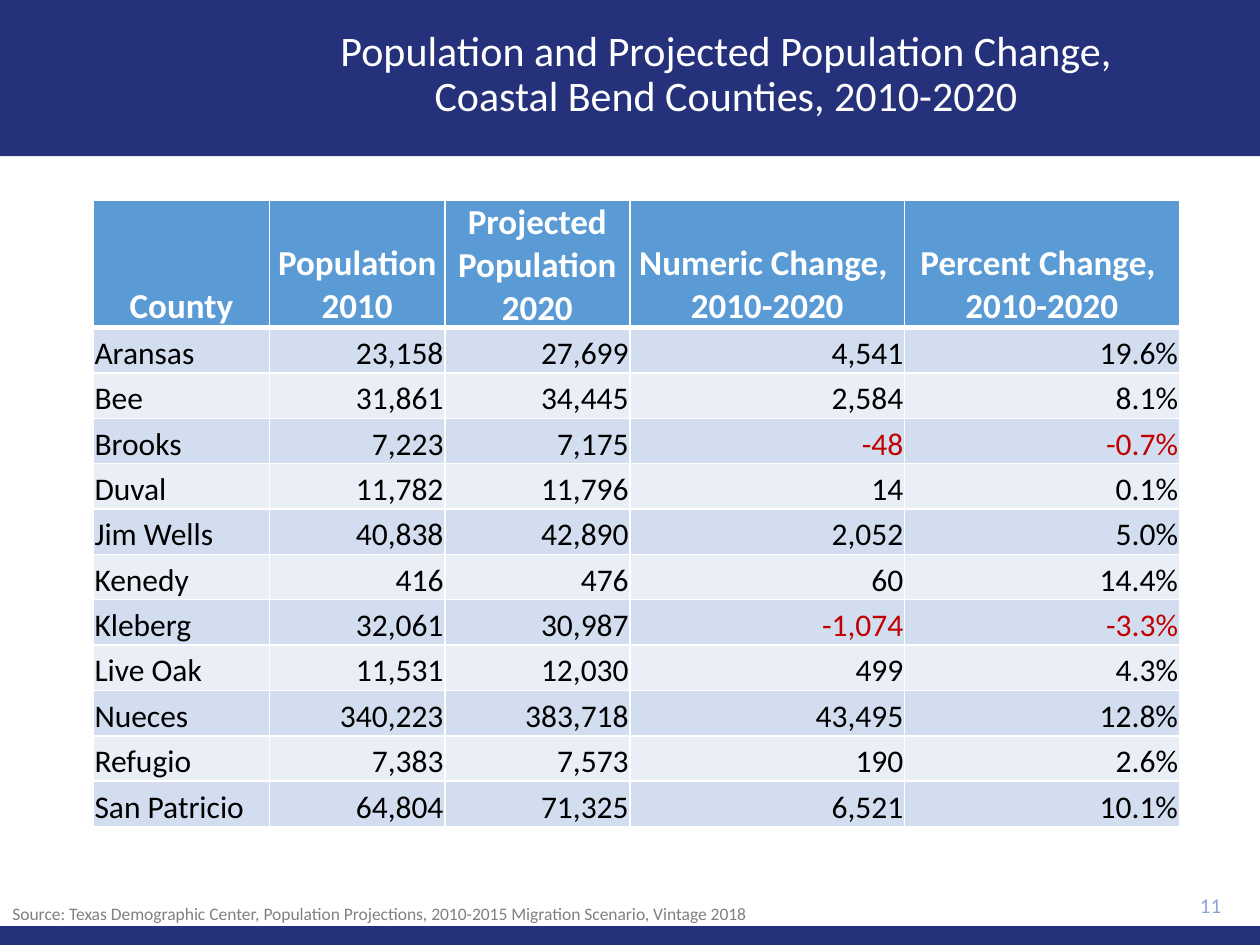
from lxml import etree
from pptx import Presentation
from pptx import util as u
from pptx.dml.color import RGBColor
from pptx.enum import shapes, text
from pptx.oxml.ns import qn

WIDTH, HEIGHT = 10, 7.5
NAVY, WHITE, BLACK, RED = "25327B", "FFFFFF", "000000", "C00000"
HEADER_FILL, BANDS = "5B9BD5", ("D2DEEF", "EAEFF7")
LEFT, CENTER, RIGHT = text.PP_ALIGN.LEFT, text.PP_ALIGN.CENTER, text.PP_ALIGN.RIGHT
MIDDLE, BOTTOM = text.MSO_ANCHOR.MIDDLE, text.MSO_ANCHOR.BOTTOM

TITLE = "Population and Projected Population Change, \vCoastal Bend Counties, 2010-2020 "
SOURCE = ("Source: Texas Demographic Center, Population Projections, "
          "2010-2015 Migration Scenario, Vintage 2018")
PAGE = "11"
HEADERS = ["County", "Population 2010", "Projected Population 2020",
           "Numeric Change, \n2010-2020", "Percent Change, \n2010-2020"]
COUNTIES = [
    ("Aransas", "23,158", "27,699", "4,541", "19.6%"),
    ("Bee", "31,861", "34,445", "2,584", "8.1%"),
    ("Brooks", "7,223", "7,175", "-48", "-0.7%"),
    ("Duval", "11,782", "11,796", "14", "0.1%"),
    ("Jim Wells", "40,838", "42,890", "2,052", "5.0%"),
    ("Kenedy", "416", "476", "60", "14.4%"),
    ("Kleberg", "32,061", "30,987", "-1,074", "-3.3%"),
    ("Live Oak", "11,531", "12,030", "499", "4.3%"),
    ("Nueces", "340,223", "383,718", "43,495", "12.8%"),
    ("Refugio", "7,383", "7,573", "190", "2.6%"),
    ("San Patricio", "64,804", "71,325", "6,521", "10.1%"),
]
COLUMN_WIDTHS = [1.4, 1.39, 1.47, 2.18, 2.18]
HEADER_HEIGHT, ROW_HEIGHT = 0.8, 0.36


def rgb(color):
    return RGBColor.from_string(color)


def inches(*lengths):
    return [u.Inches(length) for length in lengths]


def write(frame, words, size, color, align=LEFT, bold=False, spacing=None):
    frame.text = words
    for paragraph in frame.paragraphs:
        paragraph.alignment = align
        if spacing:
            paragraph.line_spacing = spacing
        for run in paragraph.runs:
            run.font.name, run.font.size, run.font.bold = "Calibri", u.Pt(size), bold
            run.font.color.rgb = rgb(color)


def add_band(slide, top, height):
    band = slide.shapes.add_shape(shapes.MSO_SHAPE.RECTANGLE, *inches(0, top, WIDTH, height))
    band.shadow.inherit = False
    band.fill.solid()
    band.fill.fore_color.rgb = rgb(NAVY)
    band.line.fill.background()


def add_text(slide, place, words, wrap=True, anchor=text.MSO_ANCHOR.TOP, **style):
    frame = slide.shapes.add_textbox(*inches(*place)).text_frame
    frame.word_wrap, frame.vertical_anchor = wrap, anchor
    write(frame, words, **style)


def set_border(cell, side, points):
    properties = cell._tc.get_or_add_tcPr()
    line = etree.SubElement(properties, qn(f"a:ln{side}"), w=str(u.Pt(points)))
    fill = etree.SubElement(line, qn("a:solidFill"))
    etree.SubElement(fill, qn("a:srgbClr"), val=WHITE)


def fill_cell(cell, words, fill, borders, **style):
    """borders gives the line width in points for each side."""
    for side, points in borders.items():
        set_border(cell, side, points)
    cell.fill.solid()
    cell.fill.fore_color.rgb = rgb(fill)
    cell.vertical_anchor = BOTTOM
    cell.margin_left = cell.margin_right = cell.margin_top = u.Inches(0.01)
    cell.margin_bottom = 0
    write(cell.text_frame, words, **style)


def add_county_table(slide, left, top):
    height = HEADER_HEIGHT + ROW_HEIGHT * len(COUNTIES)
    table = slide.shapes.add_table(
        len(COUNTIES) + 1, len(HEADERS),
        *inches(left, top, sum(COLUMN_WIDTHS), height)).table
    for column, width in zip(table.columns, COLUMN_WIDTHS):
        column.width = u.Inches(width)
    for number, row in enumerate(table.rows):
        row.height = u.Inches(ROW_HEIGHT if number else HEADER_HEIGHT)

    for column, heading in enumerate(HEADERS):
        fill_cell(table.cell(0, column), heading, HEADER_FILL, dict(L=1, R=1, T=1, B=3),
                  size=20, color=WHITE, align=CENTER, bold=True)
    for row, county in enumerate(COUNTIES, start=1):
        borders = dict(L=1, R=1, T=3 if row == 1 else 1, B=1)
        for column, value in enumerate(county):
            fill_cell(table.cell(row, column), value, BANDS[(row - 1) % 2], borders,
                      size=18, color=RED if value.startswith("-") else BLACK,
                      align=RIGHT if column else LEFT)


def main():
    deck = Presentation()
    deck.slide_width, deck.slide_height = inches(WIDTH, HEIGHT)
    slide = deck.slides.add_slide(deck.slide_layouts[6])
    add_band(slide, 0, 1.24)
    add_band(slide, HEIGHT - 0.15, 0.15)
    add_text(slide, (1.7, 0.1, 8.2, 1), TITLE, anchor=MIDDLE,
             size=24, color=WHITE, align=CENTER, spacing=0.9)
    add_county_table(slide, 0.74, 1.59)
    add_text(slide, (8.9, 7.01, 0.89, 0.34), PAGE, anchor=MIDDLE,
             size=12, color="8FA5D1", align=RIGHT)
    add_text(slide, (0, 7.12, 6.16, 0.27), SOURCE, wrap=False, size=10, color="808080")
    deck.save("out.pptx")


if __name__ == "__main__":
    main()
